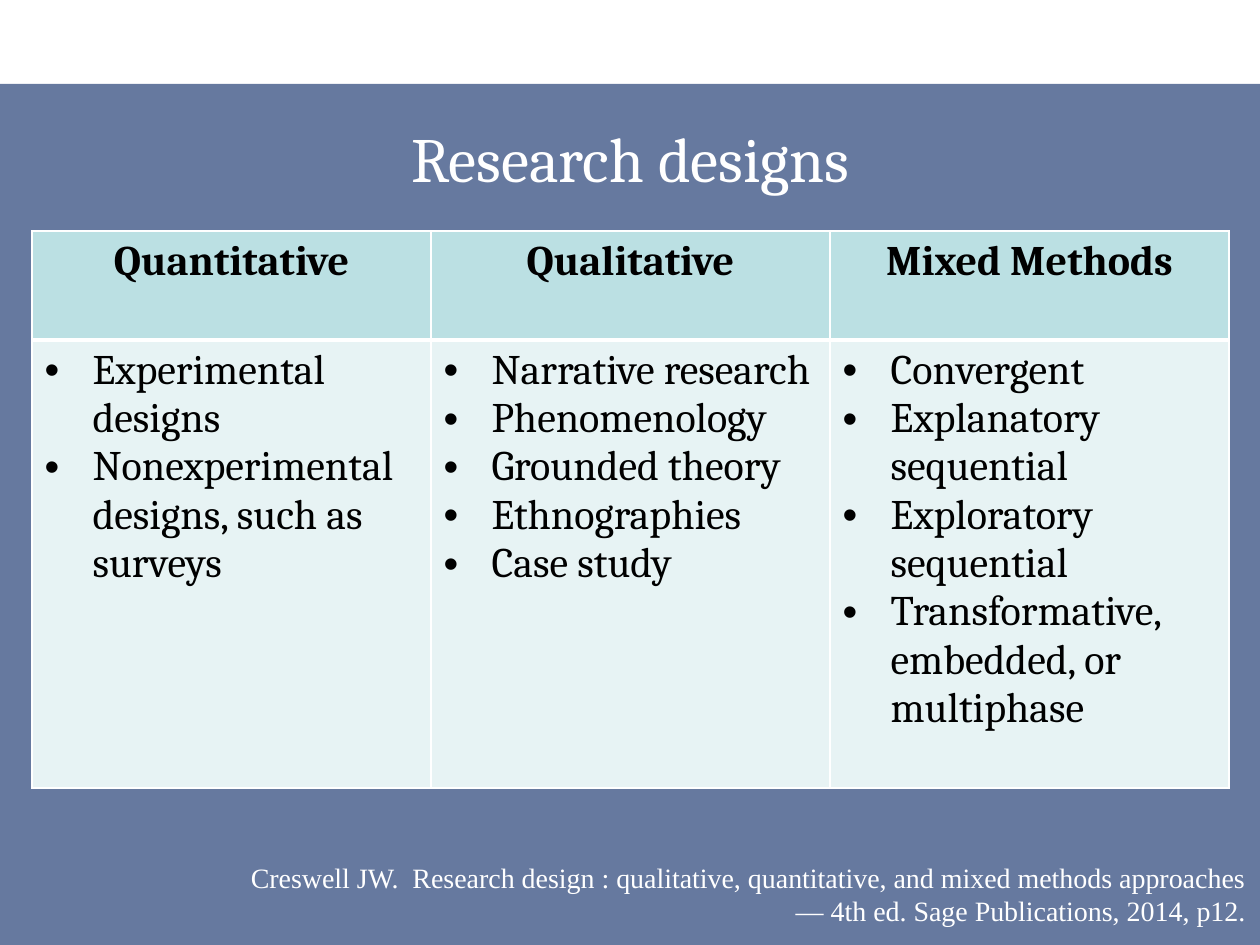
from lxml import etree
from pptx import Presentation
from pptx import util as u
from pptx.dml.color import RGBColor
from pptx.enum import shapes, text
from pptx.oxml.ns import qn

PX_PER_INCH = 126
COLORS = {"band": "002060", "header": "BBE0E3", "body": "E7F3F4",
          "light": "FFFFFF", "dark": "000000"}
BULLET_INDENT = 48
DESIGNS = {
    "Quantitative": ["Experimental designs",
                     "Nonexperimental designs, such as surveys"],
    "Qualitative": ["Narrative research", "Phenomenology", "Grounded theory",
                    "Ethnographies", "Case study"],
    "Mixed Methods": ["Convergent", "Explanatory sequential",
                      "Exploratory sequential",
                      "Transformative, embedded, or multiphase"],
}
CITATION = ("Creswell JW.  Research design : qualitative, quantitative, and "
            "mixed methods approaches— 4th ed. Sage Publications, 2014, p12.")


def px(length):
    return u.Emu(round(length * 914400 / PX_PER_INCH))


def color(name):
    return RGBColor.from_string(COLORS[name])


def write(frame, lines, size=24, font="Cambria", ink="dark", bold=False,
          align=text.PP_ALIGN.LEFT, bullet=False):
    for i, line in enumerate(lines):
        para = frame.paragraphs[0] if i == 0 else frame.add_paragraph()
        para.alignment = align
        if bullet:
            props = para._p.get_or_add_pPr()
            props.set("marL", str(px(BULLET_INDENT)))
            props.set("indent", str(-px(BULLET_INDENT)))
            etree.SubElement(props, qn("a:buFont")).set("typeface", "Arial")
            etree.SubElement(props, qn("a:buChar")).set("char", "•")
        run = para.add_run()
        run.text = line
        run.font.size, run.font.name, run.font.bold = u.Pt(size), font, bold
        run.font.color.rgb = color(ink)


class Deck:
    def __init__(self, width, height):
        self.prs = Presentation()
        self.prs.slide_width, self.prs.slide_height = px(width), px(height)
        self.slide = self.prs.slides.add_slide(self.prs.slide_layouts[5])

    def band(self, *box, fill, opacity):
        band = self.slide.shapes.add_shape(shapes.MSO_SHAPE.RECTANGLE, *map(px, box))
        band.shadow.inherit = False
        band.line.fill.background()
        band.fill.solid()
        band.fill.fore_color.rgb = color(fill)
        rgb = band._element.spPr.find(".//" + qn("a:srgbClr"))
        etree.SubElement(rgb, qn("a:alpha")).set("val", str(opacity * 1000))
        # The band lies behind the title
        tree = self.slide.shapes._spTree
        tree.insert(2, band._element)

    def title(self, words, *box):
        title = self.slide.shapes.title
        title.left, title.top, title.width, title.height = map(px, box)
        title.text_frame.vertical_anchor = text.MSO_ANCHOR.MIDDLE
        write(title.text_frame, [words], size=36, ink="light",
              align=text.PP_ALIGN.CENTER)

    def label(self, words, *box, **style):
        frame = self.slide.shapes.add_textbox(*map(px, box)).text_frame
        frame.word_wrap = True
        write(frame, [words], **style)

    def cell(self, cell, lines, fill, borders, **style):
        props = cell._tc.get_or_add_tcPr()
        for side, points in borders.items():
            line = etree.SubElement(props, qn("a:ln" + side), w=str(u.Pt(points)))
            paint = etree.SubElement(line, qn("a:solidFill"))
            etree.SubElement(paint, qn("a:srgbClr"), val=COLORS["light"])
        cell.fill.solid()
        cell.fill.fore_color.rgb = color(fill)
        write(cell.text_frame, lines, **style)

    def table(self, columns, left, top, column_width, row_heights):
        table = self.slide.shapes.add_table(
            2, len(columns), px(left), px(top),
            px(column_width * len(columns)), px(sum(row_heights))).table
        for row, height in zip(table.rows, row_heights):
            row.height = px(height)
        for col, (heading, items) in enumerate(columns.items()):
            table.columns[col].width = px(column_width)
            self.cell(table.cell(0, col), [heading], "header",
                      {"L": 1, "R": 1, "T": 1, "B": 3},
                      bold=True, align=text.PP_ALIGN.CENTER)
            self.cell(table.cell(1, col), items, "body",
                      {"L": 1, "R": 1, "T": 3, "B": 1}, bullet=True)


def main():
    deck = Deck(1260, 945)
    # Background and title
    deck.band(0, 84, 1260, 861, fill="band", opacity=60)
    deck.title("Research designs", 32, 105, 1197, 105)
    # Designs by approach
    deck.table(DESIGNS, 32, 231, 399, [109, 448])
    # Source
    deck.label(CITATION, 218, 854, 1040, 81, size=16, font="Times New Roman",
               ink="light", align=text.PP_ALIGN.RIGHT)
    deck.prs.save("out.pptx")


if __name__ == "__main__":
    main()
